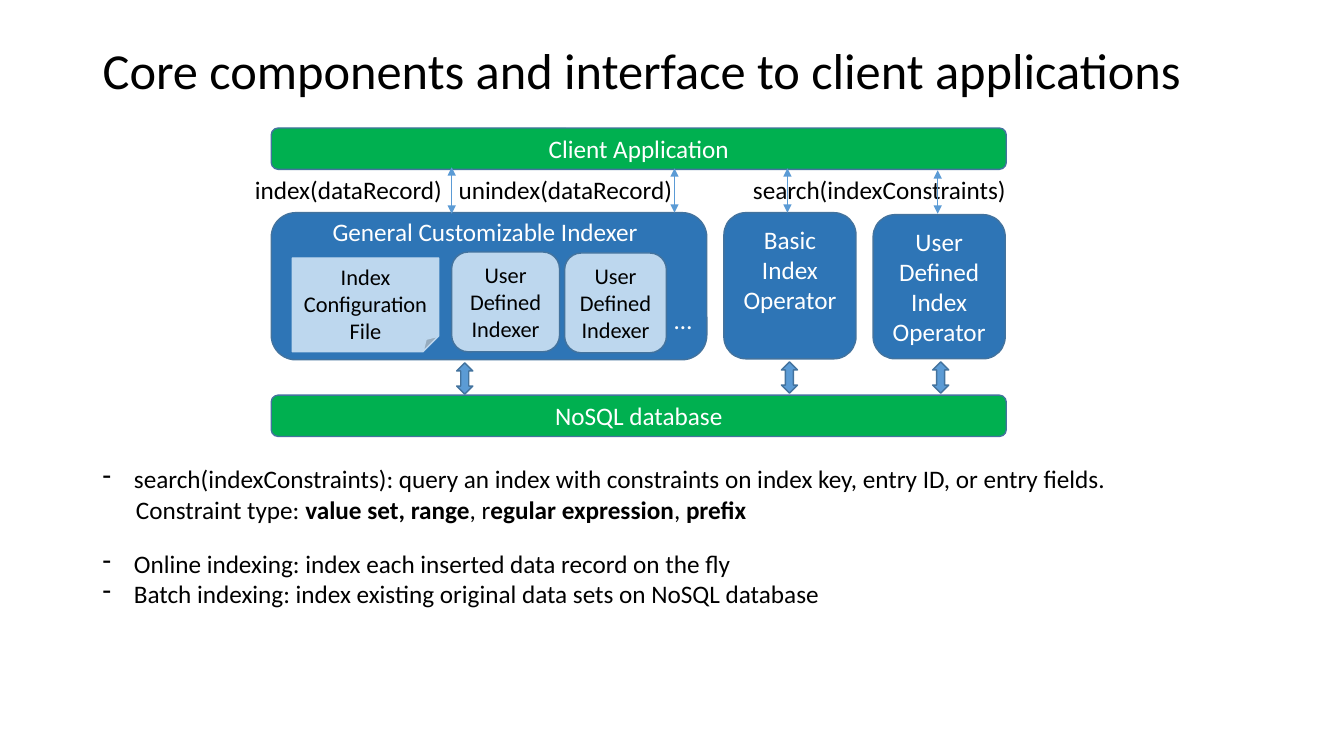
from dataclasses import dataclass

from lxml import etree
from pptx import Presentation
from pptx.dml.color import RGBColor
from pptx.enum.shapes import MSO_CONNECTOR, MSO_SHAPE
from pptx.enum.text import MSO_ANCHOR, PP_ALIGN
from pptx.oxml.ns import qn
from pptx.util import Inches, Pt

ROUNDED = MSO_SHAPE.ROUNDED_RECTANGLE
FOLDED = MSO_SHAPE.FOLDED_CORNER
UP_DOWN = MSO_SHAPE.UP_DOWN_ARROW
STRAIGHT = MSO_CONNECTOR.STRAIGHT
TOP, MIDDLE = MSO_ANCHOR.TOP, MSO_ANCHOR.MIDDLE
CENTER = PP_ALIGN.CENTER

FONT = "Calibri"
BLACK, WHITE = "000000", "FFFFFF"
GREEN, BLUE, PALE_BLUE = "00B050", "2E75B6", "BDD7EE"
ARROW_BLUE, OUTLINE = "5B9BD5", "43739E"
LEFT_MARGIN = 0.92
BULLET_INDENT = 0.31
CONTINUATION_INDENT = 0.33


@dataclass
class Box:
    left: float
    top: float
    width: float
    height: float
    fill: str
    text: str = ""
    size: int = 18
    color: str = WHITE
    anchor: MSO_ANCHOR = MIDDLE
    kind: MSO_SHAPE = ROUNDED
    outline: str = OUTLINE


@dataclass
class Label:
    left: float
    top: float
    width: float
    text: str
    color: str = BLACK
    height: float = 0.4
    size: int = 18


@dataclass
class CallArrow:
    """A thin two-headed line between the client and a component."""
    x: float
    top: float
    bottom: float


@dataclass
class Note:
    """A paragraph of (text, bold) pieces."""
    pieces: list[tuple[str, bool]]
    bullet: bool = True


BOXES = [
    Box(2.69, 1.27, 7.29, 0.41, GREEN, "Client Application"),
    Box(2.69, 3.92, 7.29, 0.41, GREEN, "NoSQL database"),
    Box(2.69, 2.11, 4.32, 1.46, BLUE),
    Box(2.9, 2.56, 1.45, 0.93, PALE_BLUE, "Index Configuration File", 16, BLACK,
        TOP, FOLDED, PALE_BLUE),
    Box(4.48, 2.5, 1.07, 0.99, PALE_BLUE, "User Defined Indexer", 16, BLACK),
    Box(5.6, 2.51, 1.01, 0.99, PALE_BLUE, "User Defined Indexer", 16, BLACK),
    Box(7.18, 2.11, 1.31, 1.45, BLUE, "Basic Index Operator", anchor=TOP),
    Box(8.66, 2.13, 1.31, 1.43, BLUE, "User Defined Index Operator", anchor=TOP),
] + [
    Box(left, top, 0.16, 0.31, ARROW_BLUE, kind=UP_DOWN)
    for left, top in ((4.53, 3.6), (7.75, 3.59), (9.25, 3.59))
]

LABELS = [
    Label(2.43, 1.68, 2.1, "index(dataRecord)"),
    Label(4.45, 1.68, 2.4, "unindex(dataRecord)"),
    Label(7.37, 1.68, 2.76, "search(indexConstraints)"),
    Label(3.2, 2.1, 3.38, "General Customizable Indexer", WHITE),
    Label(6.59, 2.97, 0.55, "…", WHITE),
]

CALL_ARROWS = [
    CallArrow(4.48, 1.66, 2.12),
    CallArrow(6.69, 1.67, 2.11),
    CallArrow(7.81, 1.67, 2.11),
    CallArrow(9.3, 1.69, 2.12),
]

SEARCH_NOTES = [
    Note([("search(indexConstraints): query an index with constraints on index key, "
           "entry ID, or entry fields.", False)]),
    Note([("Constraint type: ", False), ("value set, range", True), (", r", False),
          ("egular expression", True), (", ", False), ("prefix", True)], bullet=False),
]
INDEXING_NOTES = [
    Note([("Online indexing: index each inserted data record on the fly", False)]),
    Note([("Batch indexing: index existing original data sets on NoSQL database", False)]),
]


def rgb(color: str) -> RGBColor:
    return RGBColor.from_string(color)


def set_font(paragraph, size: int, color: str) -> None:
    paragraph.font.name = FONT
    paragraph.font.size = Pt(size)
    paragraph.font.color.rgb = rgb(color)


def add_box(slide, box: Box) -> None:
    shape = slide.shapes.add_shape(
        box.kind, Inches(box.left), Inches(box.top), Inches(box.width), Inches(box.height))
    shape.shadow.inherit = False
    shape.fill.solid()
    shape.fill.fore_color.rgb = rgb(box.fill)
    shape.line.color.rgb = rgb(box.outline)
    shape.line.width = Pt(1)
    if box.text:
        frame = shape.text_frame
        frame.word_wrap = True
        frame.vertical_anchor = box.anchor
        paragraph = frame.paragraphs[0]
        paragraph.text = box.text
        paragraph.alignment = CENTER
        set_font(paragraph, box.size, box.color)


def add_frame(slide, left: float, top: float, width: float, height: float):
    """Add a wrapping text box and return its text frame."""
    frame = slide.shapes.add_textbox(
        Inches(left), Inches(top), Inches(width), Inches(height)).text_frame
    frame.word_wrap = True
    return frame


def add_label(slide, label: Label):
    frame = add_frame(slide, label.left, label.top, label.width, label.height)
    paragraph = frame.paragraphs[0]
    paragraph.text = label.text
    set_font(paragraph, label.size, label.color)
    return frame


def add_call_arrow(slide, arrow: CallArrow) -> None:
    connector = slide.shapes.add_connector(
        STRAIGHT, Inches(arrow.x), Inches(arrow.top), Inches(arrow.x), Inches(arrow.bottom))
    connector.line.color.rgb = rgb(ARROW_BLUE)
    connector.line.width = Pt(0.5)
    properties = connector._element.spPr
    line = properties.find(qn("a:ln"))
    for end in ("a:headEnd", "a:tailEnd"):
        etree.SubElement(line, qn(end), type="triangle")
    etree.SubElement(properties, qn("a:effectLst"))


def add_notes(slide, top: float, notes: list[Note]) -> None:
    frame = add_frame(slide, LEFT_MARGIN, top, 11.42, 0.71)
    for index, note in enumerate(notes):
        paragraph = frame.add_paragraph() if index else frame.paragraphs[0]
        set_font(paragraph, 18, BLACK)
        for text, bold in note.pieces:
            run = paragraph.add_run()
            run.text = text
            run.font.bold = bold
        properties = paragraph._p.get_or_add_pPr()
        if note.bullet:
            properties.set("marL", str(Inches(BULLET_INDENT)))
            properties.set("indent", str(-Inches(BULLET_INDENT)))
            bullet = etree.Element(qn("a:buChar"), char="-")
            properties.insert(0, bullet)
        else:
            properties.set("marL", str(Inches(CONTINUATION_INDENT)))


def main() -> None:
    presentation = Presentation()
    presentation.slide_width = Inches(13.33)
    presentation.slide_height = Inches(7.5)
    slide = presentation.slides.add_slide(presentation.slide_layouts[6])

    title = add_label(slide, Label(
        LEFT_MARGIN, 0, 11.97, "Core components and interface to client applications",
        height=1.45, size=36))
    title.vertical_anchor = MIDDLE
    title.paragraphs[0].line_spacing = 0.9

    for box in BOXES:
        add_box(slide, box)
    for label in LABELS:
        add_label(slide, label)
    for arrow in CALL_ARROWS:
        add_call_arrow(slide, arrow)
    add_notes(slide, 4.55, SEARCH_NOTES)
    add_notes(slide, 5.39, INDEXING_NOTES)

    presentation.save("out.pptx")


if __name__ == "__main__":
    main()
